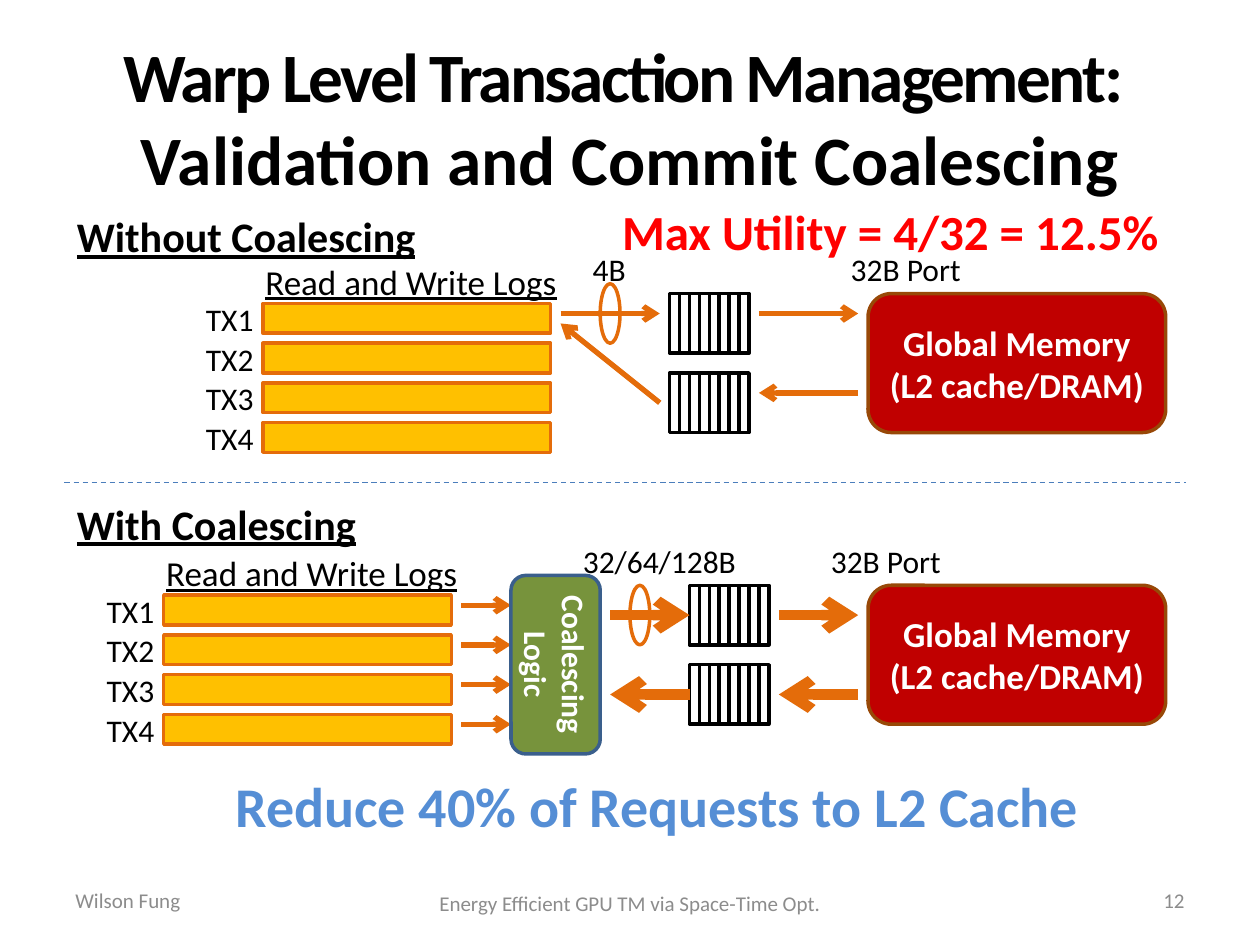
from lxml import etree
from pptx import Presentation
from pptx.dml.color import RGBColor
from pptx.enum.dml import MSO_LINE
from pptx.enum.shapes import MSO_CONNECTOR, MSO_SHAPE
from pptx.enum.text import MSO_ANCHOR, PP_ALIGN
from pptx.oxml.ns import qn
from pptx.util import Cm, Pt

LEFT, CENTER, RIGHT = PP_ALIGN.LEFT, PP_ALIGN.CENTER, PP_ALIGN.RIGHT
TOP, MIDDLE = MSO_ANCHOR.TOP, MSO_ANCHOR.MIDDLE
RECT, ROUNDED, OVAL = MSO_SHAPE.RECTANGLE, MSO_SHAPE.ROUNDED_RECTANGLE, MSO_SHAPE.OVAL
STRAIGHT, DASH = MSO_CONNECTOR.STRAIGHT, MSO_LINE.DASH

FONT = "Calibri"
COLORS = {
    "black": "000000", "white": "FFFFFF", "red": "FF0000", "footer": "8C8C8C",
    "log": "FFC000", "flow": "E46C0A", "memory": "C00000", "memory_edge": "984807",
    "logic": "77933C", "logic_edge": "3A5F8C", "divider": "4B7EBC", "result": "558ED5",
}
ROW_PITCH = 0.8
QUEUE_CELLS, CELL_WIDTH, QUEUE_HEIGHT, QUEUE_PITCH = 8, 0.2, 1.2, 1.6


def rgb(name):
    return RGBColor.from_string(COLORS[name])


def write(shape, text, size=18, color="black", bold=False, underline=False,
          align=LEFT, anchor=TOP, wrap=True, spacings=()):
    """Newlines part paragraphs, vertical tabs part lines; spacings go line by line."""
    frame = shape.text_frame
    frame.word_wrap = wrap
    frame.vertical_anchor = anchor
    for i, content in enumerate(text.split("\n")):
        paragraph = frame.add_paragraph() if i else frame.paragraphs[0]
        paragraph.alignment = align
        for j, line in enumerate(content.split("\v")):
            if j:
                paragraph.add_line_break()
            run = paragraph.add_run()
            run.text = line
            font = run.font
            font.name, font.size, font.bold = FONT, Pt(size), bold
            font.underline = underline
            font.color.rgb = rgb(color)
            if j < len(spacings):
                run._r.get_or_add_rPr().set("spc", str(int(spacings[j] * 100)))


def add_text(slide, text, left, top, width, height, **text_format):
    box = slide.shapes.add_textbox(Cm(left), Cm(top), Cm(width), Cm(height))
    write(box, text, **text_format)


def add_label(slide, text, left, top, width, height=1.02, **text_format):
    add_text(slide, text, left, top, width, height, wrap=False, **text_format)


def add_block(slide, kind, left, top, width, height, line, fill=None):
    block = slide.shapes.add_shape(kind, Cm(left), Cm(top), Cm(width), Cm(height))
    block.shadow.inherit = False
    if fill:
        block.fill.solid()
        block.fill.fore_color.rgb = rgb(fill)
    else:
        block.fill.background()
    block.line.color.rgb = rgb(line)
    block.line.width = Pt(2)
    return block


def add_line(slide, x1, y1, x2, y2, color, weight):
    line = slide.shapes.add_connector(STRAIGHT, Cm(x1), Cm(y1), Cm(x2), Cm(y2))
    line.line.color.rgb = rgb(color)
    line.line.width = Pt(weight)
    etree.SubElement(line._element.spPr, qn("a:effectLst"))
    return line


def add_arrow(slide, x1, y1, x2, y2, weight=3):
    arrow = add_line(slide, x1, y1, x2, y2, "flow", weight)
    etree.SubElement(arrow.line._get_or_add_ln(), qn("a:tailEnd"), type="arrow")


def draw_logs(slide, left, top):
    add_label(slide, "Read and Write Logs", left + 1.2, top - 0.8, 6.43, 1.12,
              size=20, underline=True)
    for row in range(4):
        y = top + row * ROW_PITCH
        add_block(slide, RECT, left + 1.4, y + 0.2, 5.8, 0.6, "flow", "log")
        add_label(slide, f"TX{row + 1}", left, y, 1.47)


def draw_queues(slide, left, top):
    for queue in range(2):
        for cell in range(QUEUE_CELLS):
            add_block(slide, RECT, left + cell * CELL_WIDTH, top + queue * QUEUE_PITCH,
                      CELL_WIDTH, QUEUE_HEIGHT, "black")


def draw_memory(slide, left, top):
    memory = add_block(slide, ROUNDED, left, top, 6, 2.8, "memory_edge", "memory")
    write(memory, "Global Memory\n(L2 cache/DRAM)", size=20, color="white", bold=True,
          align=CENTER, anchor=MIDDLE)


def draw_coalescing_logic(slide, left, top, width, height):
    """The block lies flat and is turned a quarter to fill the given upright box."""
    shift = (height - width) / 2
    logic = add_block(slide, ROUNDED, left - shift, top + shift, height, width,
                      "logic_edge", "logic")
    logic.rotation = 90
    write(logic, "Coalescing Logic", color="white", bold=True, align=CENTER, anchor=MIDDLE)


def draw_without_coalescing(slide, left, top):
    draw_logs(slide, left + 2.6, top)
    draw_memory(slide, left + 16.2, top)
    draw_queues(slide, left + 12.2, top)
    add_arrow(slide, left + 10, top + 0.4, left + 12, top + 0.4)
    add_arrow(slide, left + 14, top + 0.4, left + 16, top + 0.4)
    add_arrow(slide, left + 16, top + 2, left + 14, top + 2)
    add_arrow(slide, left + 12, top + 2.2, left + 10, top + 0.6)
    add_block(slide, OVAL, left + 10.8, top - 0.2, 0.4, 1.2, "flow")
    add_label(slide, "4B", left + 10.4, top - 1, 1.2)
    add_label(slide, "32B Port", left + 15.6, top - 1, 2.74)
    add_label(slide, "Without Coalescing", left, top - 1.8, 7.42, 1.27,
              size=24, bold=True, underline=True)


def draw_with_coalescing(slide, left, top):
    draw_logs(slide, left + 0.6, top)
    draw_memory(slide, left + 16.2, top)
    draw_queues(slide, left + 12.6, top)
    for row in range(4):
        y = top + 0.4 + row * ROW_PITCH
        add_arrow(slide, left + 8, y, left + 9, y)
    draw_coalescing_logic(slide, left + 9, top - 0.2, 1.8, 3.6)
    for start in (left + 11, left + 14.4):
        add_arrow(slide, start, top + 0.6, start + 1.6, top + 0.6, weight=6)
        add_arrow(slide, start + 1.6, top + 2.2, start, top + 2.2, weight=6)
    add_block(slide, OVAL, left + 11.4, top, 0.4, 1.2, "flow")
    add_label(slide, "32/64/128B", left + 10.2, top - 1, 3.63)
    add_label(slide, "32B Port", left + 15.2, top - 1, 2.74)
    add_label(slide, "With Coalescing", left, top - 1.88, 6.2, 1.27,
              size=24, bold=True, underline=True)


def draw_footer(slide, left, top, width):
    style = {"size": 12, "color": "footer", "anchor": MIDDLE}
    add_text(slide, "Wilson Fung", left, top, 5.92, 1.01, **style)
    add_text(slide, "Energy Efficient GPU TM via Space-Time Opt.",
             left + (width - 9.2) / 2, top + 0.08, 9.2, 0.94, align=CENTER, **style)
    add_text(slide, "12", left + width - 5.92, top, 5.92, 1.01, align=RIGHT, **style)


def main():
    presentation = Presentation()
    presentation.slide_width, presentation.slide_height = Cm(25.4), Cm(19.05)
    slide = presentation.slides.add_slide(presentation.slide_layouts[6])

    add_text(slide, "Warp Level Transaction Management: \vValidation and Commit Coalescing",
             0, 0.76, 25.4, 3.18, size=39.6, bold=True, align=CENTER, anchor=MIDDLE,
             spacings=(-1.5, 0))
    draw_without_coalescing(slide, 1.3, 5.92)
    draw_with_coalescing(slide, 1.3, 11.8)
    add_line(slide, 1.3, 9.73, 23.9, 9.73, "divider", 0.75).line.dash_style = DASH
    add_label(slide, "Reduce 40% of Requests to L2 Cache", 4.5, 15.42, 17.68, 1.63,
              size=32, color="result", bold=True)
    add_label(slide, "Max Utility = 4/32 = 12.5%", 12.29, 3.94, 11.48, 1.45,
              size=28, color="red", bold=True)
    draw_footer(slide, 1.27, 17.65, 22.86)
    presentation.save("out.pptx")


if __name__ == "__main__":
    main()
